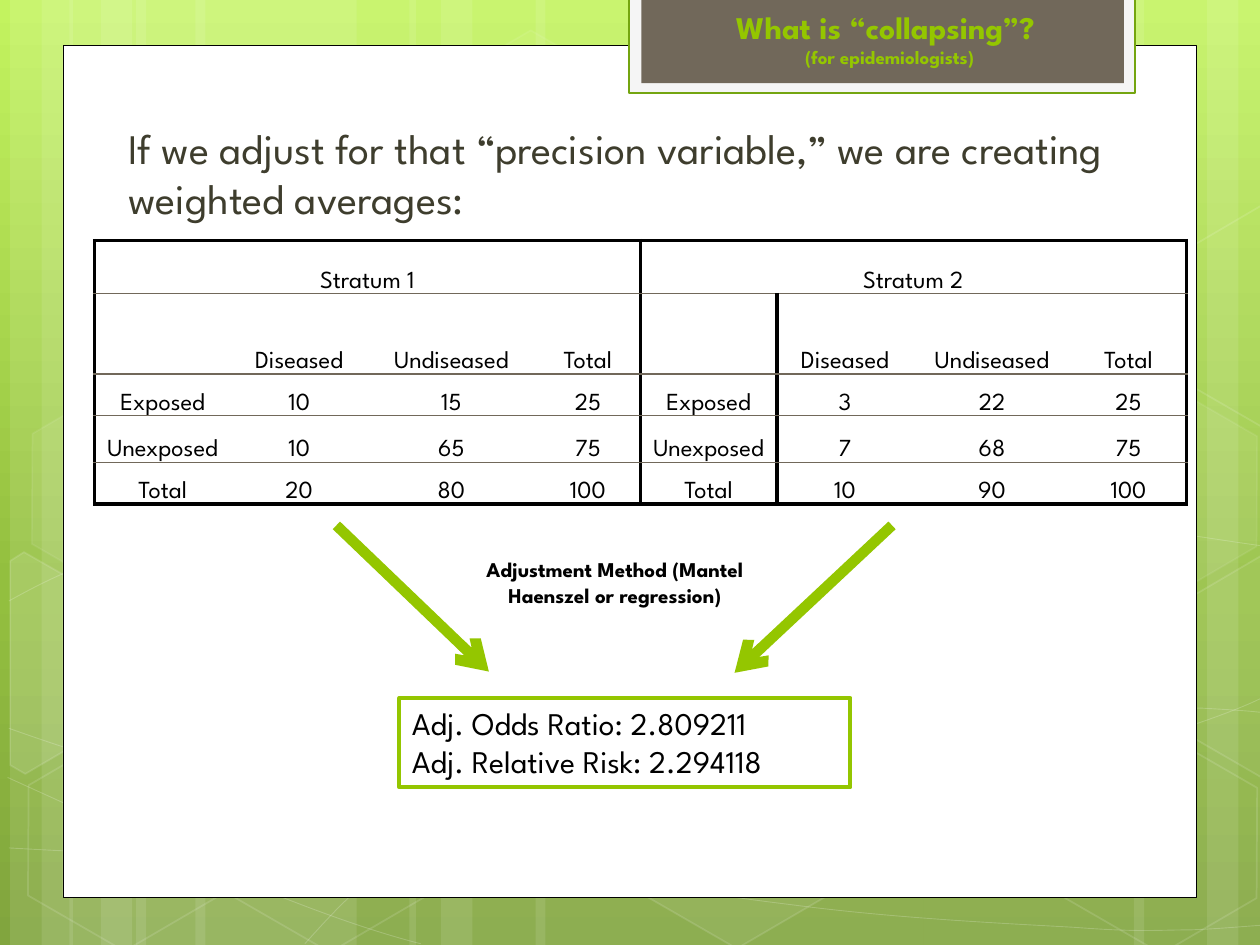
from collections import namedtuple
from copy import deepcopy
from math import cos, radians, sin

from lxml import etree
from pptx import Presentation
from pptx import util as u
from pptx.dml.color import RGBColor
from pptx.enum import shapes, text
from pptx.oxml.ns import qn

Inches, Pt = u.Inches, u.Pt
Box = namedtuple("Box", "left top width height")
FONT = "League Spartan"
COLORS = {"white": "FFFFFF", "black": "000000", "lime": "94C600", "leaf": "74A510",
          "brown": "71685A", "pale": "F5F5F5", "olive": "3E3D2D",
          "sky": "C3F35F", "meadow": "93BF3F", "moss": "81A53E"}

STRIPES = [(1.08, 1.75), (0.08, 0.5), (0.33, 0.83), (1.55, 1.75), (0.55, 0.5), (0.8, 0.83),
           (7.33, 1.75), (9.58, 0.5), (9, 0.83), (4.25, 3.08), (3.25, 0.5), (3.5, 0.83)]
# Each curve is a start point followed by control, control, end for every segment.
CURVES = [
    [(0.07, 6.73), (0.61, 6.76), (1.15, 6.79), (1.9, 6.78), (2.65, 6.77), (3.58, 6.75),
     (4.58, 6.65), (5.58, 6.55), (7, 6.36), (7.92, 6.17), (8.83, 5.98), (9.77, 5.68), (10.07, 5.51)],
    [(0.07, 4.77), (0.36, 4.61), (0.65, 4.46), (1.21, 4.31), (1.78, 4.16), (2.59, 3.94),
     (3.47, 3.87), (4.36, 3.8), (5.44, 3.79), (6.54, 3.87), (7.64, 3.95), (9.47, 4.26), (10.07, 4.34)],
    [(0.06, 6.17), (1.27, 6.72), (2.47, 7.27), (3.34, 7.49)],
    [(0.07, 5.78), (0.38, 5.89), (0.7, 6), (1.28, 6.16), (1.86, 6.31), (2.73, 6.56),
     (3.57, 6.73), (4.4, 6.9), (5.45, 7.08), (6.28, 7.18), (7.11, 7.29), (8, 7.33),
     (8.53, 7.36), (9.05, 7.4), (9.19, 7.38), (9.45, 7.38), (9.71, 7.37), (9.89, 7.35), (10.07, 7.34)],
    [(2.42, 7.49), (2.6, 7.29), (2.78, 7.09), (3.02, 6.91), (3.26, 6.73), (3.6, 6.53),
     (3.88, 6.39), (4.16, 6.25), (4.33, 6.19), (4.7, 6.09), (5.06, 5.99), (5.73, 5.85),
     (6.08, 5.78), (6.44, 5.71), (6.49, 5.71), (6.8, 5.69), (7.11, 5.66), (7.6, 5.63),
     (7.94, 5.62), (8.29, 5.61), (8.86, 5.62), (8.86, 5.62), (9.08, 5.62), (9.31, 5.62),
     (9.53, 5.62), (9.71, 5.63), (9.88, 5.64), (9.97, 5.65), (10.06, 5.66), (10.03, 5.65), (10.06, 5.66)]]
TILT = 30
# left, top, fill opacity (0 for none), line opacity
HEXAGONS = [(3.34, 0.36, 4, 8), (4.97, 5.89, 6, 12), (0.11, 5.91, 0, 12), (0.14, 3.12, 7, 8),
            (1.74, 5.92, 0, 12), (7.53, 4.53, 10, 12), (8.34, 5.93, 0, 12), (8.34, 3.14, 7, 8)]
# corners as they stand, centre of the tilt, fill opacity
CUT_HEXAGONS = [
    ([(0.08, 4.45), (0.19, 4.38), (0.96, 4.82), (0.95, 5.7), (0.2, 6.14), (0.08, 6.07)], (0.36, 5.35), 10),
    ([(9.26, 4.85), (10.01, 4.41), (10.09, 4.46), (10.09, 6.13), (10.02, 6.17), (9.26, 5.73)], (9.85, 5.2), 4),
    ([(9.26, 2.07), (10.01, 1.63), (10.1, 1.68), (10.09, 3.35), (10.02, 3.39), (9.26, 2.95)], (9.85, 2.41), 0)]

COLUMN_TWELFTHS = [13, 13, 16, 10, 13, 13, 15, 11]
ROW_HEIGHTS = [0.42, 0.64, 0.33, 0.37, 0.33]
STRATUM_COLUMNS = 4
ROWS = [["Stratum 1", "", "", "", "Stratum 2", "", "", ""],
        ["", "Diseased", "Undiseased", "Total"] * 2,
        ["Exposed", "10", "15", "25", "Exposed", "3", "22", "25"],
        ["Unexposed", "10", "65", "75", "Unexposed", "7", "68", "75"],
        ["Total", "20", "80", "100", "Total", "10", "90", "100"]]


def rgb(name):
    return RGBColor.from_string(COLORS[name])


def set_attributes(target, values):
    for name, value in values.items():
        setattr(target, name, value)


def paint(fill, color, opacity=100):
    """Fill with a named colour, or with nothing when the opacity is 0."""
    if not color or not opacity:
        fill.background()
        return
    fill.solid()
    fill.fore_color.rgb = rgb(color)


def style(shape, fill=None, line=None, width=1, fill_opacity=100, line_opacity=100):
    shape.shadow.inherit = False
    paint(shape.fill, fill, fill_opacity)
    paint(shape.line.fill, line)
    if line:
        shape.line.width = Pt(width)
    properties = shape.element.spPr
    for tag, opacity in (("a:solidFill", fill_opacity), ("a:ln/a:solidFill", line_opacity)):
        color = properties.find("/".join(map(qn, tag.split("/"))) + "/" + qn("a:srgbClr"))
        if color is not None and opacity < 100:
            etree.SubElement(color, qn("a:alpha"), val=str(opacity * 1000))


def add_box(slide, box, kind=shapes.MSO_SHAPE.RECTANGLE, **look):
    shape = slide.shapes.add_shape(kind, *map(Inches, box))
    style(shape, **look)
    return shape


def add_outline(slide, box, points, close, **look):
    corners = [(Inches(box.left + x), Inches(box.top + y)) for x, y in points]
    builder = slide.shapes.build_freeform(*corners[0])
    builder.add_line_segments(corners[1:], close=close)
    shape = builder.convert_to_shape()
    style(shape, **look)
    return shape


def bend(shape):
    """Turn every three straight segments into one cubic Bezier segment."""
    lines = list(shape.element.iter(qn("a:lnTo")))
    for first in range(0, len(lines), 3):
        curve = etree.SubElement(lines[first].getparent(), qn("a:cubicBezTo"))
        for line in lines[first:first + 3]:
            curve.append(line[0])
            line.getparent().remove(line)


def turn_back(point, centre):
    """Where a point lies before the tilt about the centre."""
    angle = radians(-TILT)
    x, y = point[0] - centre[0], point[1] - centre[1]
    return (centre[0] + x * cos(angle) - y * sin(angle),
            centre[1] + x * sin(angle) + y * cos(angle))


def write(paragraph, words, size, color="black", bold=False, align=text.PP_ALIGN.LEFT):
    paragraph.alignment = align
    run = paragraph.add_run()
    run.text = words
    set_attributes(run.font, {"name": FONT, "size": Pt(size), "bold": bold})
    run.font.color.rgb = rgb(color)


def add_text(slide, box, words, **format_values):
    frame = slide.shapes.add_textbox(*map(Inches, box)).text_frame
    frame.word_wrap = True
    write(frame.paragraphs[0], words, **format_values)
    return frame


def paint_background(slide):
    fill = slide.background.fill
    fill.gradient()
    fill.gradient_angle = 270
    stops = slide.element.find(".//" + qn("a:gsLst"))
    stops.append(deepcopy(stops[-1]))
    for stop, (position, color) in zip(fill.gradient_stops,
                                       ((0, "sky"), (0.62, "meadow"), (1, "moss"))):
        stop.position = position
        stop.color.rgb = rgb(color)


def add_backdrop(slide, box):
    for left, width in STRIPES:
        add_box(slide, Box(box.left + left, box.top, width, box.height), fill="white", fill_opacity=10)
    for curve in CURVES:
        bend(add_outline(slide, box, curve, False, line="white", width=0.5, line_opacity=20))
    for left, top, fill_opacity, line_opacity in HEXAGONS:
        hexagon = add_box(slide, Box(box.left + left, box.top + top, 1.75, 1.52),
                          shapes.MSO_SHAPE.HEXAGON, fill="white", line="white",
                          fill_opacity=fill_opacity, line_opacity=line_opacity)
        hexagon.rotation = TILT
        hexagon.adjustments[0] = 0.285
    for points, centre, opacity in CUT_HEXAGONS:
        upright = [turn_back(point, centre) for point in points]
        add_outline(slide, box, upright, True, fill="white", line="white",
                    fill_opacity=opacity, line_opacity=12).rotation = TILT


def add_title_tab(slide, box):
    add_box(slide, box, fill="pale", line="leaf", width=1.25)
    add_box(slide, Box(box.left + 0.1, box.top, 3.83, 0.68), fill="brown")
    title = slide.shapes.title
    title.element.getparent().append(title.element)  # bring in front of the tab
    place = Box(box.left - 0.32, box.top + 0.11, 4.78, 0.5)
    set_attributes(title, dict(zip(place._fields, map(Inches, place))))
    set_attributes(title.text_frame, {"word_wrap": True, "auto_size": text.MSO_AUTO_SIZE.NONE,
                                      "vertical_anchor": text.MSO_ANCHOR.BOTTOM})
    paragraph = title.text_frame.paragraphs[0]
    look = {"color": "lime", "bold": True, "align": text.PP_ALIGN.CENTER}
    write(paragraph, "What is “collapsing”? ", 18, **look)
    paragraph.add_line_break()
    write(paragraph, "(for epidemiologists)", 10.8, **look)


def set_borders(cell, row, column):
    """Black around each stratum and beside the second row header, brown between rows."""
    edge = column % STRATUM_COLUMNS
    heavy = {"L": edge == 0 or column == 5,
             "R": edge == STRATUM_COLUMNS - 1 or column == 4 or row == 0,
             "T": row == 0, "B": row == len(ROWS) - 1}
    properties = cell._tc.get_or_add_tcPr()
    for position, (side, black) in enumerate(heavy.items()):
        line = etree.Element(qn("a:ln" + side), w=str(Pt(2.25 if black else 1)))
        if black or side in "TB":
            fill = etree.SubElement(line, qn("a:solidFill"))
            etree.SubElement(fill, qn("a:srgbClr"), val=COLORS["black" if black else "brown"])
        else:
            etree.SubElement(line, qn("a:noFill"))
        properties.insert(position, line)


def add_strata_table(slide, box):
    table = slide.shapes.add_table(len(ROWS), len(COLUMN_TWELFTHS), *map(Inches, box)).table
    set_attributes(table, {"first_row": False, "horz_banding": False})
    table._tbl.tblPr.find(qn("a:tableStyleId")).text = "{2D5ABB26-0587-4C30-8999-92F81FD0307C}"
    for first in (0, STRATUM_COLUMNS):
        table.cell(0, first).merge(table.cell(0, first + STRATUM_COLUMNS - 1))
    for column, twelfths in zip(table.columns, COLUMN_TWELFTHS):
        column.width = Inches(twelfths / 12)
    margin = Inches(0.01)
    for row, (words, height) in enumerate(zip(ROWS, ROW_HEIGHTS)):
        table.rows[row].height = Inches(height)
        for column, word in enumerate(words):
            cell = table.cell(row, column)
            if cell.is_spanned:
                continue
            set_attributes(cell, {"margin_left": margin, "margin_right": margin, "margin_top": margin,
                                  "margin_bottom": 0, "vertical_anchor": text.MSO_ANCHOR.BOTTOM})
            paint(cell.fill, "white")
            set_borders(cell, row, column)
            if word:
                write(cell.text_frame.paragraphs[0], word, 14, align=text.PP_ALIGN.CENTER)


def add_arrow(slide, *ends):
    arrow = slide.shapes.add_connector(shapes.MSO_CONNECTOR.STRAIGHT, *map(Inches, ends))
    arrow.line.width = Pt(6)
    arrow.line.color.rgb = rgb("lime")
    etree.SubElement(arrow.line._get_or_add_ln(), qn("a:tailEnd"), type="arrow")
    etree.SubElement(arrow.element.spPr, qn("a:effectLst"))


def add_adjustment(slide, box):
    """Arrows from both strata, the method between them and the adjusted results below."""
    left, top = box.left, box.top
    add_arrow(slide, left, top, left + 1.21, top + 1.16)
    add_arrow(slide, left + box.width, top, left + 3.16, top + 1.17)
    add_text(slide, Box(left + 1, top + 0.2, 2.42, 0.71),
             "Adjustment Method (Mantel Haenszel or regression)",
             size=12, bold=True, align=text.PP_ALIGN.CENTER)
    frame = add_box(slide, Box(left + 0.5, top + 1.37, 3.58, 0.71), line="lime", width=2.25).text_frame
    set_attributes(frame, {"word_wrap": True, "vertical_anchor": text.MSO_ANCHOR.TOP})
    write(frame.paragraphs[0], "Adj. Odds Ratio: 2.809211", 18)
    write(frame.add_paragraph(), "Adj. Relative Risk: 2.294118", 18)


def main():
    presentation = Presentation()
    set_attributes(presentation, {"slide_width": Inches(10), "slide_height": Inches(7.5)})
    slide = presentation.slides.add_slide(presentation.slide_layouts.get_by_name("Title Only"))
    paint_background(slide)
    add_backdrop(slide, Box(0, 0, 10, 7.5))
    add_box(slide, Box(0.5, 0.36, 9, 6.76), fill="white", line="black", width=0.5)
    add_title_tab(slide, Box(4.99, -0.02, 4.02, 0.76))
    statement = add_text(
        slide, Box(0.92, 0.92, 8.33, 6),
        "If we adjust for that “precision variable,” we are creating weighted averages:",
        size=24, color="olive")
    statement.paragraphs[0].space_before = Pt(4.8)
    add_strata_table(slide, Box(0.75, 1.91, 8.67, 2.08))
    add_adjustment(slide, Box(2.67, 4.17, 4.41, 2.08))
    presentation.save("out.pptx")


if __name__ == "__main__":
    main()
